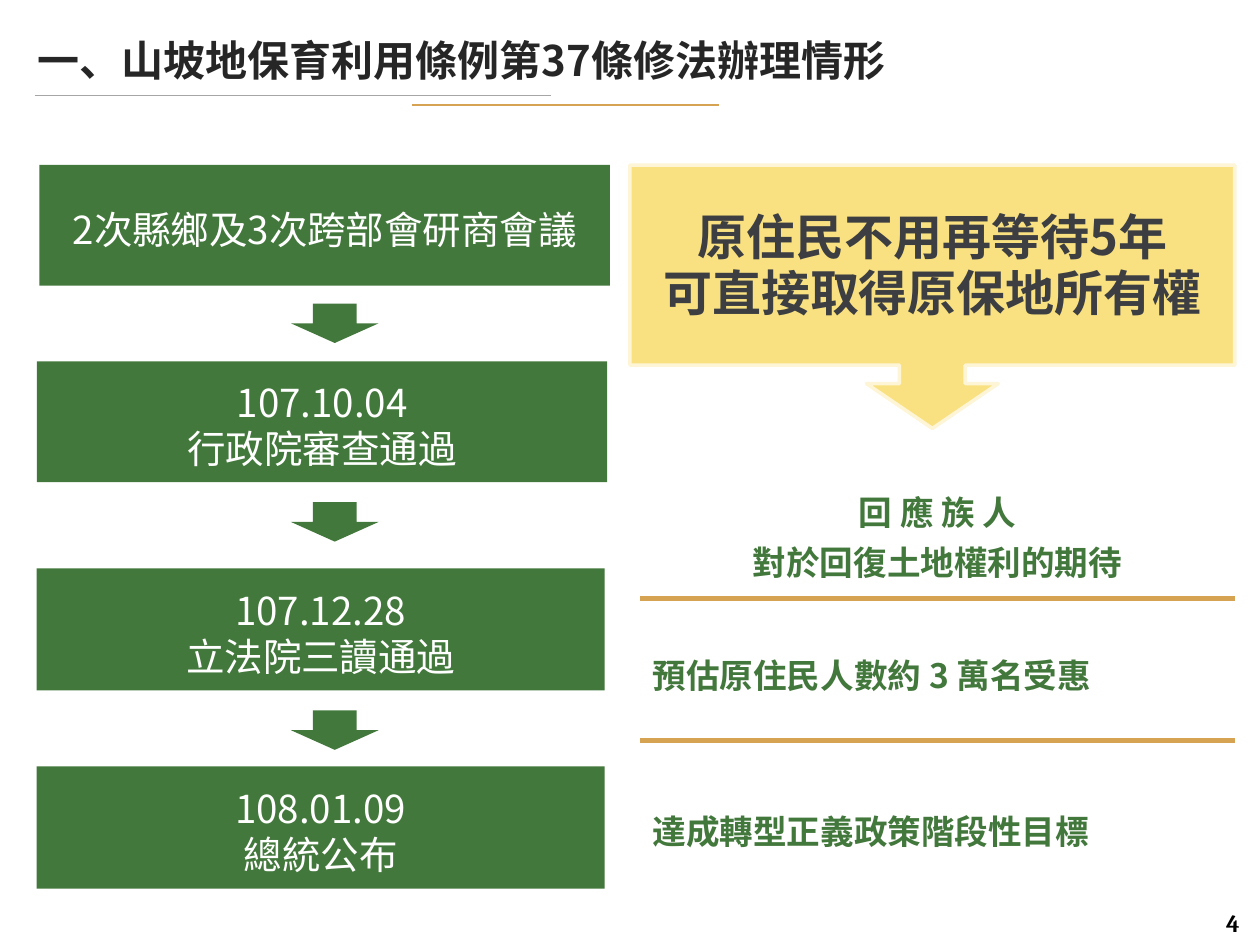
from lxml import etree
from pptx import Presentation
from pptx import util as u
from pptx.dml import color
from pptx.enum import shapes, text
from pptx.oxml import ns

Pt = u.Pt
KIND, ALIGN, ANCHOR = shapes.MSO_SHAPE, text.PP_ALIGN, text.MSO_ANCHOR
SANS = "Noto Sans CJK SC"
GREEN, GOLD, WHITE = "43783C", "D5A352", "FFFFFF"

# Content
TITLE = "一、山坡地保育利用條例第37條修法辦理情形"
# lines, left, top, width, height
STEPS = [
    (["2次縣鄉及3次跨部會研商會議"], 22.5, 94.3, 326, 69),
    (["107.10.04", "行政院審查通過"], 21, 206.5, 326, 69),
    (["107.12.28", "立法院三讀通過"], 21, 324.8, 324.5, 69.8),
    (["108.01.09", "總統公布"], 21, 438, 324.5, 69.8),
]
ARROWS = [173.5, 287, 406]
CLAIM = ["原住民不用再等待5年", "可直接取得原保地所有權"]
# lines, top, height, alignment, line spacing
GAINS = [
    (["回 應 族 人", "對於回復土地權利的期待"], 273, 65.5, ALIGN.CENTER, 28.5),
    (["預估原住民人數約 3 萬名受惠"], 366.5, 35.3, ALIGN.LEFT, 28),
    (["達成轉型正義政策階段性目標"], 455.8, 35.3, ALIGN.LEFT, 28),
]
# x1, x2, y, colour, weight
RULES = [
    (20, 314.6, 54.7, "A6A6A6", 0.5),
    (235.5, 411, 60, GOLD, 1),
    (365.8, 705.6, 342, GOLD, 3),
    (365.8, 705.6, 423.2, GOLD, 3),
]


def rgb(code):
    return color.RGBColor.from_string(code)


def write(frame, lines, size, ink, bold=False, small=False, font=SANS,
          align=ALIGN.CENTER, anchor=ANCHOR.MIDDLE, pitch=None):
    frame.word_wrap = True
    frame.vertical_anchor = anchor
    for i, line in enumerate(lines):
        para = frame.add_paragraph() if i else frame.paragraphs[0]
        para.alignment = align
        if pitch:
            para.line_spacing = Pt(pitch)
        run = para.add_run()
        run.text = line
        run.font.size, run.font.bold, run.font.name = Pt(size), bold, font
        run.font.color.rgb = rgb(ink)
        # East Asian face and small capitals
        props = run._r.get_or_add_rPr()
        etree.SubElement(props, ns.qn("a:ea")).set("typeface", font)
        if small:
            props.set("cap", "small")


def block(slide, kind, box, fill):
    item = slide.shapes.add_shape(kind, *map(Pt, box))
    item.shadow.inherit = False
    item.fill.solid()
    item.fill.fore_color.rgb = rgb(fill)
    item.line.fill.background()
    return item


def rule(slide, x1, x2, y, ink, width):
    line = slide.shapes.add_connector(
        shapes.MSO_CONNECTOR.STRAIGHT, Pt(x1), Pt(y), Pt(x2), Pt(y))
    line.line.color.rgb = rgb(ink)
    line.line.width = Pt(width)
    etree.SubElement(line._element.spPr, ns.qn("a:effectLst"))


def main():
    deck = Presentation()
    deck.slide_width, deck.slide_height = Pt(720), Pt(540)
    slide = deck.slides.add_slide(deck.slide_layouts[5])

    # Title
    head = slide.shapes.title
    head.left, head.top, head.width, head.height = map(Pt, (14.4, 8, 666.7, 45.4))
    write(head.text_frame, [TITLE], 30, "262626", True, True,
          align=ALIGN.LEFT, anchor=ANCHOR.BOTTOM)

    # Yellow callout
    call = block(slide, KIND.DOWN_ARROW_CALLOUT, (360, 94.3, 345.6, 150.5), "F9E181")
    for i, part in enumerate((0.25, 0.25, 0.17, 0.76)):
        call.adjustments[i] = part
    call.line.color.rgb = rgb("FDF5D5")
    call.line.width = Pt(2)
    write(call.text_frame, CLAIM, 28, "3C3E42", True, pitch=32)

    # Benefits
    for lines, top, high, align, pitch in GAINS:
        box = slide.shapes.add_textbox(Pt(365.8), Pt(top), Pt(339.8), Pt(high))
        write(box.text_frame, lines, 24, GREEN, True, True,
              align=align, anchor=ANCHOR.TOP, pitch=pitch)

    # Steps and the arrows between them
    for lines, *box in STEPS:
        step = block(slide, KIND.RECTANGLE, box, GREEN)
        step.text_frame.margin_top = Pt(8)
        write(step.text_frame, lines, 22, WHITE, pitch=26)
    for top in ARROWS:
        block(slide, KIND.DOWN_ARROW, (166.2, top, 50.2, 22.5), GREEN)

    # Rules
    for item in RULES:
        rule(slide, *item)

    # Page number
    page = slide.shapes.add_textbox(Pt(680.4), Pt(512.6), Pt(48.2), Pt(29.5))
    write(page.text_frame, ["4"], 14, "000000", True, font="Cambria")

    deck.save("out.pptx")


if __name__ == "__main__":
    main()
